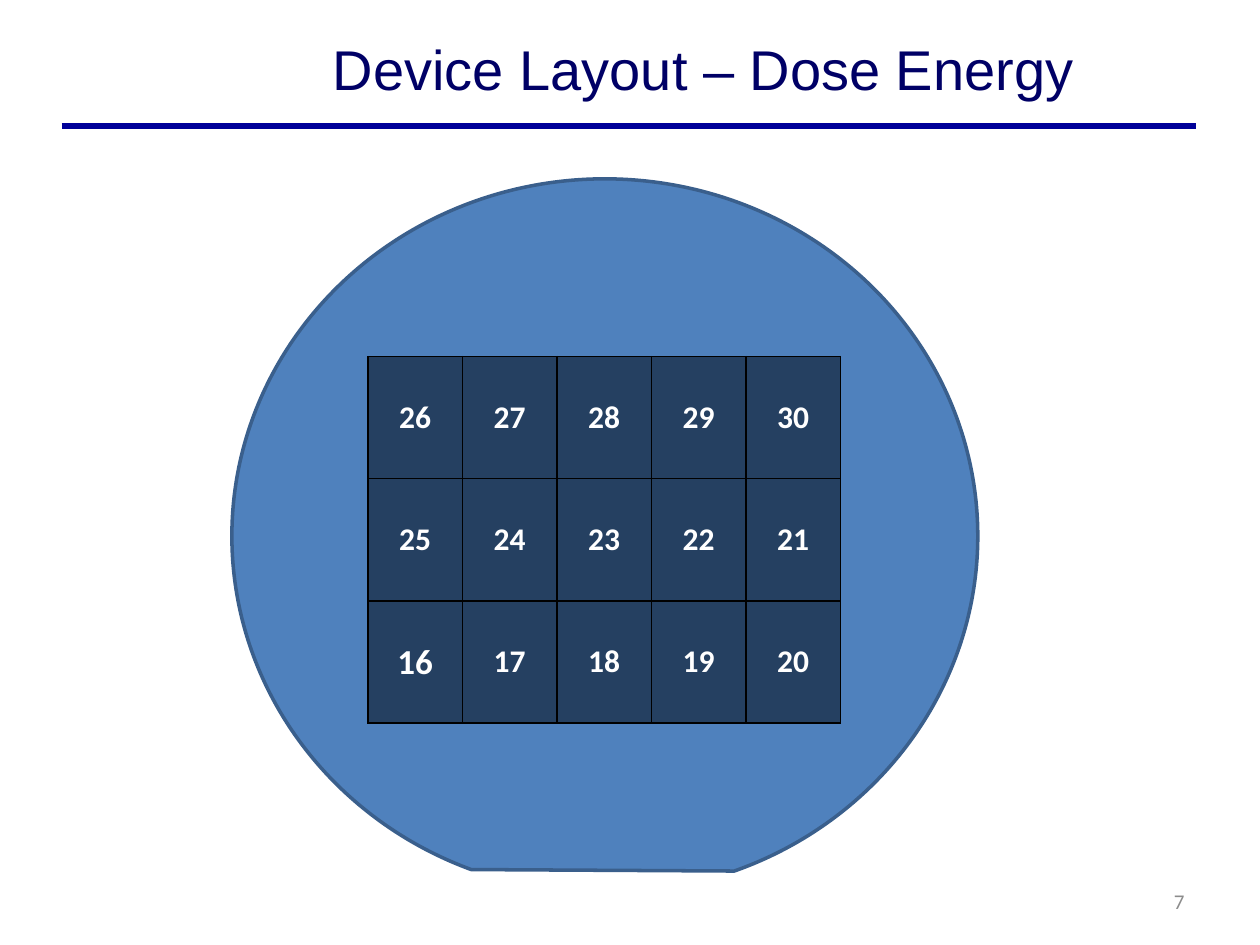
"""Build the wafer slide showing the device layout for dose energy."""
from lxml import etree
from pptx import Presentation
from pptx.dml.color import RGBColor
from pptx.enum.shapes import MSO_CONNECTOR, MSO_SHAPE
from pptx.enum.text import MSO_ANCHOR, PP_ALIGN
from pptx.oxml import parse_xml
from pptx.oxml.ns import nsdecls, qn
from pptx.util import Inches, Pt

CENTER, RIGHT = PP_ALIGN.CENTER, PP_ALIGN.RIGHT
MIDDLE = MSO_ANCHOR.MIDDLE
CHORD = MSO_SHAPE.CHORD
STRAIGHT = MSO_CONNECTOR.STRAIGHT

TITLE = "Device Layout – Dose Energy"
PAGE_NUMBER = "7"
DEVICES = [
    [26, 27, 28, 29, 30],
    [25, 24, 23, 22, 21],
    [16, 17, 18, 19, 20],
]
FIRST_DEVICE = 16
FLAT_ANGLES = (111.84, 68.87)
ADJUSTMENT_PER_DEGREE = 0.6

THEME = {
    "title": {"font": "Arial", "size": 32, "color": "000066"},
    "number": {"font": "Calibri", "size": 12, "color": "8C8C8C"},
    "device": {"font": "Calibri", "size": 18, "color": "FFFFFF", "bold": True},
    "first_size": 20,
    "rule": "000099",
    "wafer": "4F81BD",
    "wafer_edge": "3A5F8C",
    "cell": "254061",
    "border": "000000",
}

RULE = (0.49, 1, 9.49, 1)
TITLE_BOX = (1.67, 0.08, 7.83, 0.92)
NUMBER_BOX = (7.17, 6.95, 2.33, 0.4)
WAFER_BOX = (1.84, 1.42, 5.92, 5.67)
GRID_LEFT, GRID_TOP = 2.92, 2.83
CELL_WIDTH, CELL_HEIGHT = 0.75, 0.97


def inches(values):
    """Convert a sequence of numbers to lengths."""
    return [Inches(value) for value in values]


def write(frame, text, font, size, color, bold=False, align=CENTER):
    """Put one formatted paragraph in a text frame."""
    frame.word_wrap = True
    para = frame.paragraphs[0]
    para.alignment = align
    span = para.add_run()
    span.text = text
    span.font.name = font
    span.font.size = Pt(size)
    span.font.bold = bold
    span.font.color.rgb = RGBColor.from_string(color)


def set_borders(cell, color, width):
    """Draw a solid line on all four sides of a table cell."""
    properties = cell._tc.get_or_add_tcPr()
    for position, side in enumerate(("lnL", "lnR", "lnT", "lnB")):
        properties.insert(position, parse_xml(
            f'<a:{side} {nsdecls("a")} w="{Pt(width)}"><a:solidFill>'
            f'<a:srgbClr val="{color}"/></a:solidFill></a:{side}>'))


def add_title(page):
    """Place the title and the rule below it."""
    rule = page.shapes.add_connector(STRAIGHT, *inches(RULE))
    rule.line.color.rgb = RGBColor.from_string(THEME["rule"])
    rule.line.width = Pt(3)
    etree.SubElement(rule._element.spPr, qn("a:effectLst"))
    title = page.shapes.title
    title.left, title.top, title.width, title.height = inches(TITLE_BOX)
    title.text_frame.vertical_anchor = MIDDLE
    write(title.text_frame, TITLE, **THEME["title"])


def add_page_number(page):
    """Place the page number at the lower right."""
    box = page.shapes.add_textbox(*inches(NUMBER_BOX))
    box.text_frame.vertical_anchor = MIDDLE
    write(box.text_frame, PAGE_NUMBER, align=RIGHT, **THEME["number"])


def add_wafer(page):
    """Draw the wafer as a circle with a flat lower edge."""
    wafer = page.shapes.add_shape(CHORD, *inches(WAFER_BOX))
    for index, angle in enumerate(FLAT_ANGLES):
        wafer.adjustments[index] = angle * ADJUSTMENT_PER_DEGREE
    wafer.shadow.inherit = False
    wafer.fill.solid()
    wafer.fill.fore_color.rgb = RGBColor.from_string(THEME["wafer"])
    wafer.line.color.rgb = RGBColor.from_string(THEME["wafer_edge"])
    wafer.line.width = Pt(2)


def add_devices(page):
    """Add the table of numbered devices."""
    rows, columns = len(DEVICES), len(DEVICES[0])
    place = (GRID_LEFT, GRID_TOP, columns * CELL_WIDTH, rows * CELL_HEIGHT)
    table = page.shapes.add_table(rows, columns, *inches(place)).table
    table.first_row = table.horz_banding = False
    for column in table.columns:
        column.width = Inches(CELL_WIDTH)
    for row, numbers in zip(table.rows, DEVICES):
        row.height = Inches(CELL_HEIGHT)
        for cell, number in zip(row.cells, numbers):
            style = dict(THEME["device"])
            if number == FIRST_DEVICE:
                style["size"] = THEME["first_size"]
            cell.vertical_anchor = MIDDLE
            cell.fill.solid()
            cell.fill.fore_color.rgb = RGBColor.from_string(THEME["cell"])
            set_borders(cell, THEME["border"], 1)
            write(cell.text_frame, str(number), **style)


def main():
    """Assemble and save the deck."""
    deck = Presentation()
    deck.slide_width, deck.slide_height = Inches(10), Inches(7.5)
    page = deck.slides.add_slide(deck.slide_layouts[5])
    add_title(page)
    add_page_number(page)
    add_wafer(page)
    add_devices(page)
    deck.save("out.pptx")


if __name__ == "__main__":
    main()
